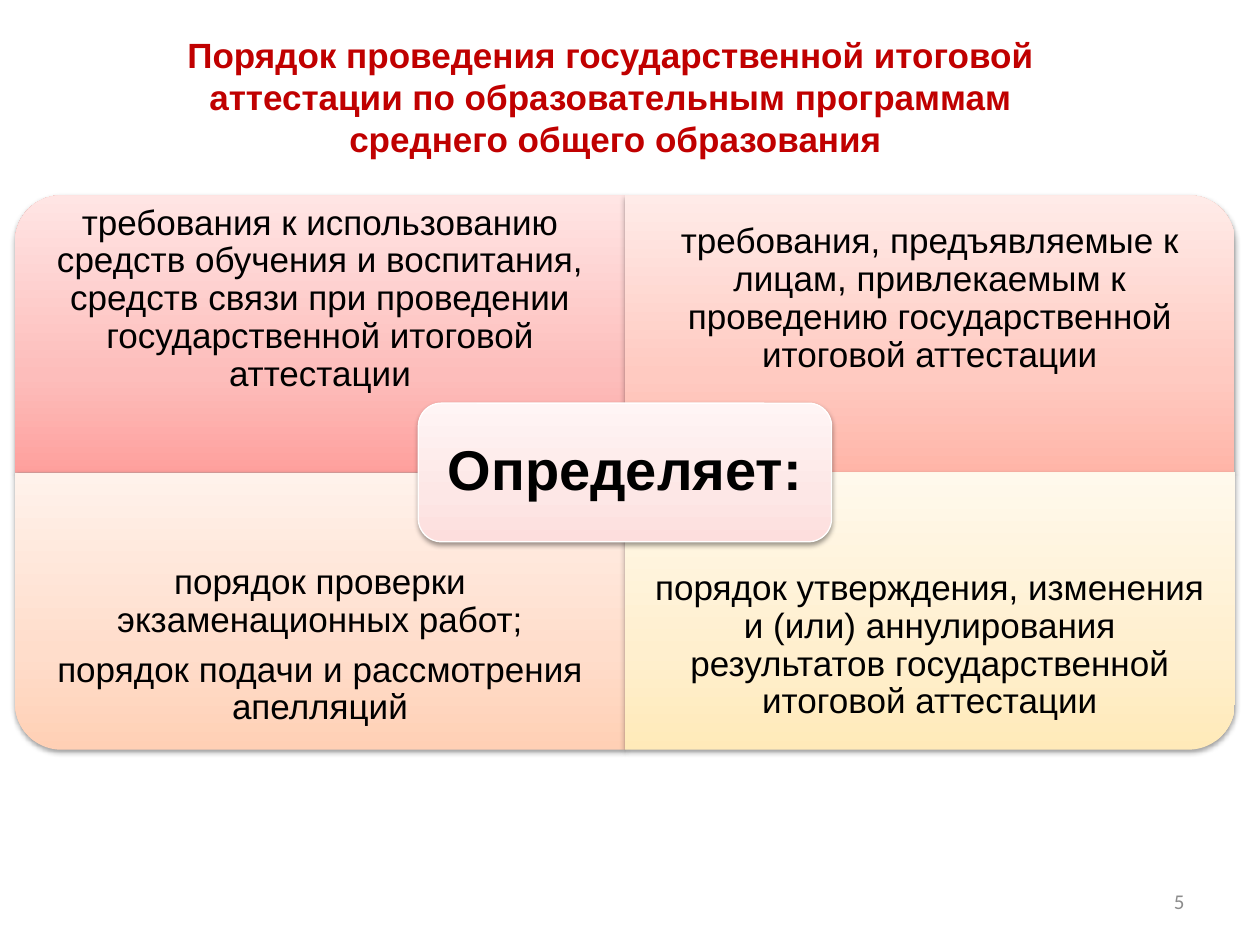
from copy import deepcopy

from lxml.etree import SubElement
from pptx import Presentation
from pptx.dml.color import RGBColor
from pptx.enum.shapes import MSO_SHAPE
from pptx.enum.text import MSO_ANCHOR, MSO_AUTO_SIZE, PP_ALIGN
from pptx.oxml.ns import qn
from pptx.util import Inches, Pt

TITLE = ("Порядок проведения государственной итоговой \v"
         "аттестации по образовательным программам \v"
         "среднего общего образования")
QUADRANTS = [
    (0, 0, 270, ("FEA09D", "FDBDBB", "FFE5E4"),
     ["требования к использованию средств обучения и воспитания, средств связи "
      "при проведении государственной итоговой аттестации"]),
    (1, 0, 0, ("FFB5A8", "FFCAC1", "FFEBE8"),
     ["требования, предъявляемые к лицам, привлекаемым к проведению "
      "государственной итоговой аттестации"]),
    (0, 1, 180, ("FFD0B5", "FFDDCB", "FFF2EB"),
     ["порядок проверки экзаменационных работ;",
      "порядок подачи и рассмотрения апелляций"]),
    (1, 1, 90, ("FFEAB9", "FFEFCE", "FFF9EC"),
     ["порядок утверждения, изменения и (или) аннулирования результатов "
      "государственной итоговой аттестации"]),
]


def color(value):
    """Turn a hex string into a colour."""
    return RGBColor.from_string(value)


def write(frame, paragraphs, size, ink="000000", bold=False, name="Arial",
          align=PP_ALIGN.CENTER, inset=0.1, spacing=None, after=None):
    """Fill a text frame with evenly formatted paragraphs."""
    frame.word_wrap = True
    frame.auto_size = MSO_AUTO_SIZE.NONE
    frame.vertical_anchor = MSO_ANCHOR.MIDDLE
    for side in ("left", "top", "right", "bottom"):
        setattr(frame, f"margin_{side}", Inches(inset))
    frame.text = "\n".join(paragraphs)
    for paragraph in frame.paragraphs:
        layout = {"alignment": align, "line_spacing": spacing, "space_after": after}
        for key, value in layout.items():
            setattr(paragraph, key, value)
        for run in paragraph.runs:
            for key, value in {"size": Pt(size), "bold": bold, "name": name}.items():
                setattr(run.font, key, value)
            run.font.color.rgb = color(ink)


def add_panel(slide, kind, box, shades, rotation=0):
    """Add a shaded panel with an upright gradient and a soft shadow."""
    left, top, width, height = box
    if rotation % 180:
        left, top = left + (width - height) / 2, top + (height - width) / 2
        width, height = height, width
    panel = slide.shapes.add_shape(kind, *map(Inches, (left, top, width, height)))
    panel.rotation = rotation
    panel.fill.gradient()
    panel.fill.gradient_angle = 90
    properties = panel._element.spPr
    gradient = properties.find(qn("a:gradFill"))
    gradient.set("rotWithShape", "0")
    stops = gradient.find(qn("a:gsLst"))
    stops.append(deepcopy(stops[-1]))
    for stop, position, shade in zip(panel.fill.gradient_stops, (0, 0.35, 1), shades):
        stop.position = position
        stop.color.rgb = color(shade)
    panel.line.fill.background()
    panel.shadow.inherit = False
    shadow = SubElement(properties.find(qn("a:effectLst")), qn("a:outerShdw"),
                        blurRad=str(Pt(3.1)), dist=str(Pt(1.6)), dir="5400000",
                        rotWithShape="0")
    black = SubElement(shadow, qn("a:srgbClr"), val="000000")
    SubElement(black, qn("a:alpha"), val="38000")
    return panel


def add_title(slide, box):
    """Place and format the slide title."""
    title = slide.shapes.title
    title.left, title.top, title.width, title.height = map(Inches, box)
    write(title.text_frame, [TITLE], 20, "C00000", bold=True)


def add_matrix(slide, box):
    """Add four quadrants with a label over their common corner."""
    left, top, width, height = box
    cell_width, cell_height = width / 2, height / 2
    text_height = cell_height * 0.75
    for column, row, rotation, shades, paragraphs in QUADRANTS:
        x, y = left + column * cell_width, top + row * cell_height
        add_panel(slide, MSO_SHAPE.ROUND_1_RECTANGLE,
                  (x, y, cell_width, cell_height), shades, rotation)
        text_top = y + row * (cell_height - text_height)
        text = slide.shapes.add_textbox(
            *map(Inches, (x, text_top, cell_width, text_height)))
        write(text.text_frame, paragraphs, 20, inset=0.16, spacing=0.9, after=Pt(7))

    label_width, label_height = 3.28, cell_height / 2
    label = add_panel(slide, MSO_SHAPE.ROUNDED_RECTANGLE,
                      (left + (width - label_width) / 2,
                       top + (height - label_height) / 2, label_width, label_height),
                      ("FDDEDD", "FDE7E6", "FFF5F5"))
    label.line.color.rgb = color("FFFFFF")
    label.line.width = Pt(0.75)
    write(label.text_frame, ["Определяет:"], 32, bold=True, inset=0.13,
          spacing=0.9, after=Pt(11))


def add_page_number(slide, box):
    """Add the page number in the lower right corner."""
    number = slide.shapes.add_textbox(*map(Inches, box))
    write(number.text_frame, ["5"], 12, "8C8C8C", name="Calibri",
          align=PP_ALIGN.RIGHT)


def main():
    """Build and save the slide."""
    deck = Presentation()
    deck.slide_width, deck.slide_height = Inches(10), Inches(7.5)
    slide = deck.slides.add_slide(deck.slide_layouts[5])
    add_title(slide, (0.12, 0.29, 9.53, 0.95))
    add_matrix(slide, (0.12, 1.55, 9.68, 4.4))
    add_page_number(slide, (7.17, 6.95, 2.33, 0.4))
    deck.save("out.pptx")


if __name__ == "__main__":
    main()
